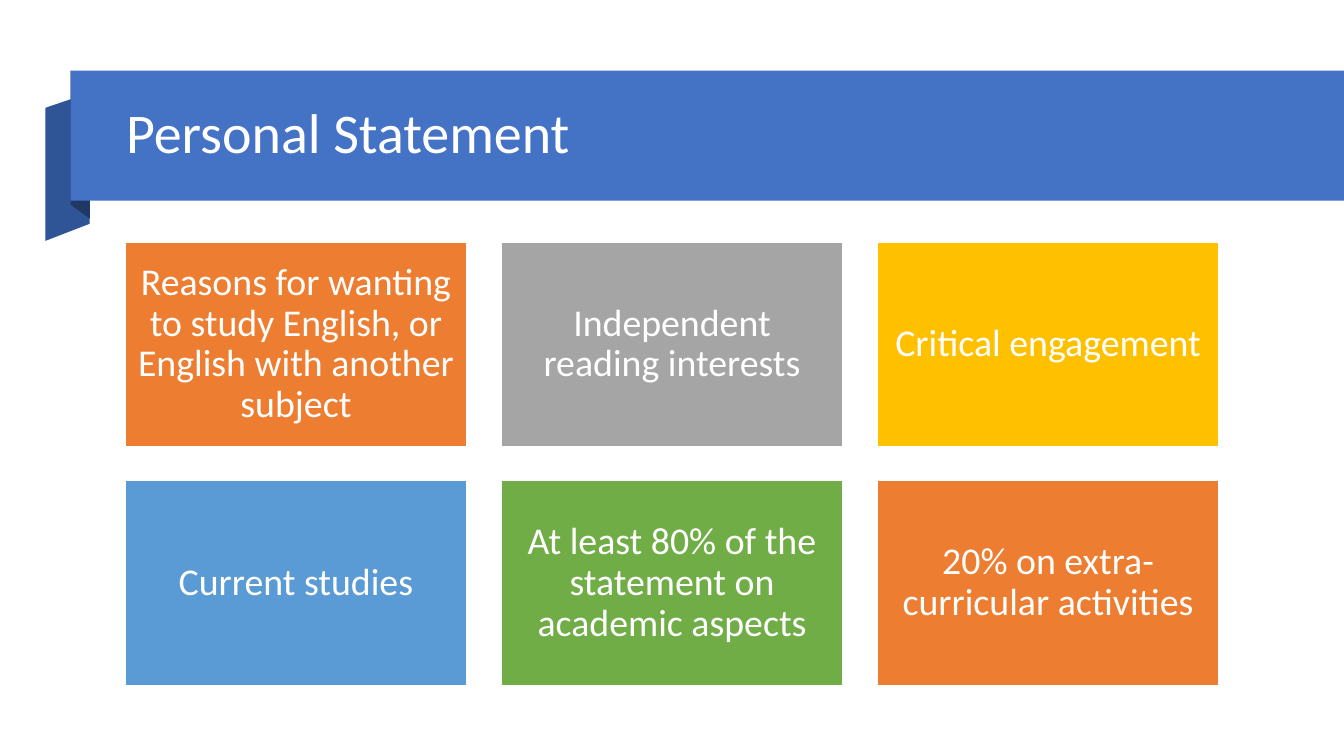
import pptx
import pptx.dml.color
import pptx.enum.shapes
import pptx.enum.text
import pptx.util

Inches = pptx.util.Inches
Pt = pptx.util.Pt

COLOURS = {
    "white": "FFFFFF",
    "banner": "4472C4",
    "ribbon": "2F5597",
    "fold": "203864",
    "orange": "ED7D31",
    "grey": "A5A5A5",
    "gold": "FFC000",
    "blue": "5B9BD5",
    "green": "70AD47",
}
FONT = "Calibri"
TOPICS = [
    ("Reasons for wanting to study English, or English with another subject", "orange"),
    ("Independent reading interests", "grey"),
    ("Critical engagement", "gold"),
    ("Current studies", "blue"),
    ("At least 80% of the statement on academic aspects", "green"),
    ("20% on extra-curricular activities", "orange"),
]


def colour(name):
    return pptx.dml.color.RGBColor.from_string(COLOURS[name])


def paint(shape, fill, line=None):
    shape.shadow.inherit = False
    shape.fill.solid()
    shape.fill.fore_color.rgb = colour(fill)
    if line:
        shape.line.color.rgb = colour(line)
        shape.line.width = Pt(1)
    else:
        shape.line.fill.background()


def write(shape, text, size, align):
    frame = shape.text_frame
    frame.text = text
    frame.word_wrap = True
    frame.auto_size = pptx.enum.text.MSO_AUTO_SIZE.NONE
    frame.vertical_anchor = pptx.enum.text.MSO_ANCHOR.MIDDLE
    para = frame.paragraphs[0]
    para.alignment = align
    para.line_spacing = 0.9
    para.font.name = FONT
    para.font.size = Pt(size)
    para.font.color.rgb = colour("white")


def add_rectangle(page, left, top, width, height):
    return page.shapes.add_shape(
        pptx.enum.shapes.MSO_SHAPE.RECTANGLE,
        Inches(left), Inches(top), Inches(width), Inches(height))


def add_outline(page, points, fill):
    corners = [(Inches(x), Inches(y)) for x, y in points]
    builder = page.shapes.build_freeform(*corners[0])
    builder.add_line_segments(corners[1:], close=True)
    paint(builder.convert_to_shape(), fill)


def add_banner(page, left, top, width, height, text):
    """Title band with a ribbon end folded behind its left edge."""
    inner = left + 0.19
    add_outline(page, [(inner, top + 1.52), (left - 0.25, top + 1.69),
                       (left - 0.25, top + 0.37), (inner, top + 0.22)], "ribbon")
    add_outline(page, [(inner, top + 1.47), (left, top + 1.33),
                       (left, top), (inner, top + 0.15)], "fold")
    paint(add_rectangle(page, left, top, width, height), "banner")

    title = page.shapes.title
    title.left, title.top = Inches(left + 0.45), Inches(top + 0.16)
    title.width, title.height = Inches(11.27), Inches(0.96)
    write(title, text, 40, pptx.enum.text.PP_ALIGN.LEFT)
    # Bring the title in front of the band.
    title.element.getparent().append(title.element)


def add_topic_grid(page, left, top, width, height, columns=3, rows=2, gap=0.34):
    tile_width = (width - gap * (columns - 1)) / columns
    tile_height = (height - gap * (rows - 1)) / rows
    for index, (text, fill) in enumerate(TOPICS):
        row, column = divmod(index, columns)
        tile = add_rectangle(page, left + column * (tile_width + gap),
                             top + row * (tile_height + gap), tile_width, tile_height)
        paint(tile, fill, "white")
        write(tile, text, 27, pptx.enum.text.PP_ALIGN.CENTER)
        frame = tile.text_frame
        frame.margin_left = frame.margin_right = Inches(0.11)
        frame.margin_top = frame.margin_bottom = Inches(0.11)


def main():
    deck = pptx.Presentation()
    deck.slide_width, deck.slide_height = Inches(13.33), Inches(7.5)
    page = deck.slides.add_slide(deck.slide_layouts[5])
    add_banner(page, 0.7, 0.7, 12.63, 1.29, "Personal Statement")
    add_topic_grid(page, 1.24, 2.4, 10.85, 4.4)
    deck.save("out.pptx")


if __name__ == "__main__":
    main()
